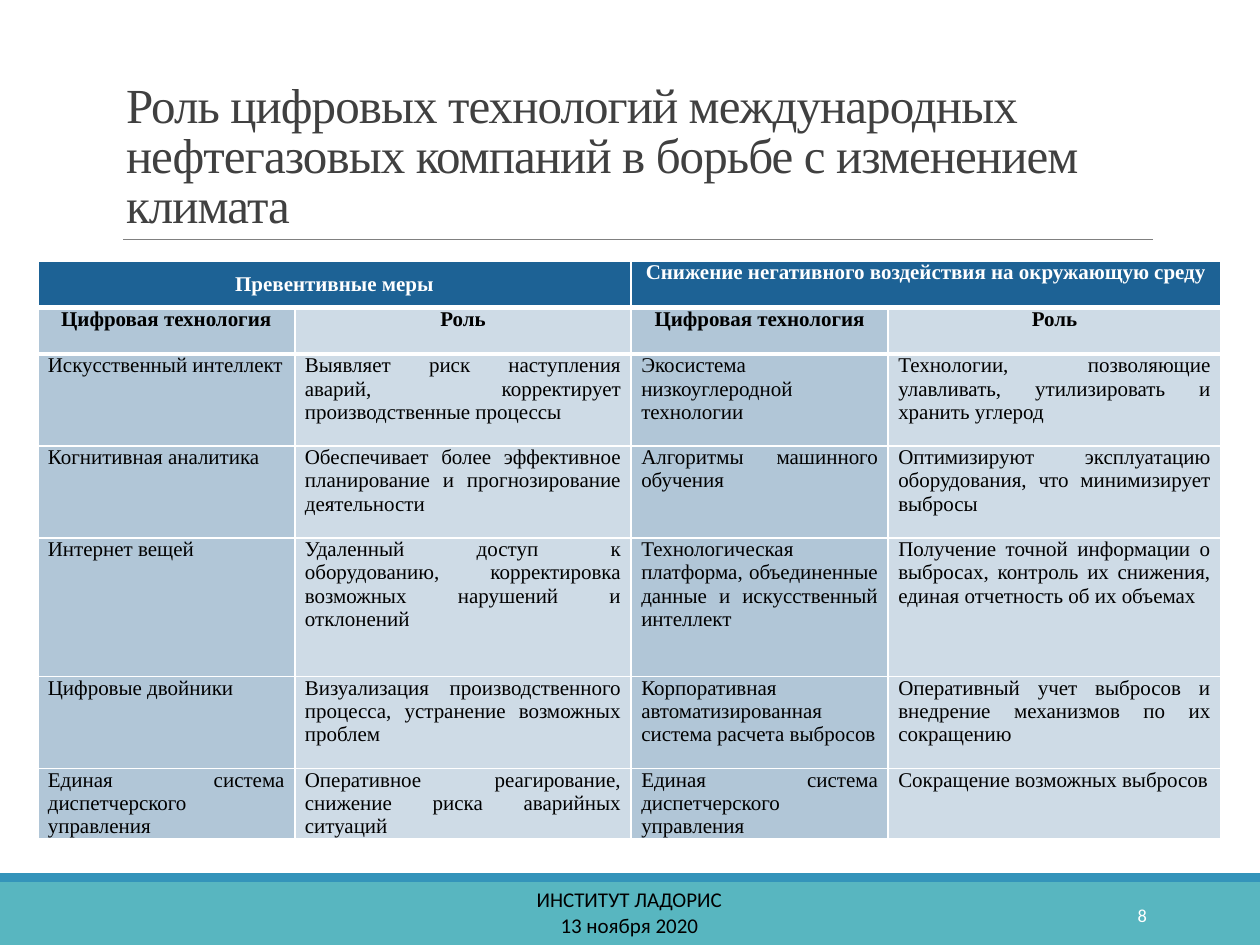
from pptx import Presentation
from pptx.dml.color import RGBColor
from pptx.enum.shapes import MSO_CONNECTOR as Connector, MSO_SHAPE as Shape
from pptx.enum.text import MSO_ANCHOR as Anchor, MSO_AUTO_SIZE as AutoSize, PP_ALIGN as Align
from pptx.oxml.ns import qn
from pptx.util import Inches, Pt
from lxml import etree

SERIF, SANS = "Times New Roman", "Calibri"
TITLE = ("Роль цифровых технологий международных нефтегазовых компаний "
         "в борьбе с изменением климата")
GROUPS = ["Превентивные меры", "Снижение негативного воздействия на окружающую среду"]
MEASURES = [
    ["Цифровая технология", "Роль"] * 2,
    ["Искусственный интеллект",
     "Выявляет риск наступления аварий, корректирует производственные процессы",
     "Экосистема низкоуглеродной технологии",
     "Технологии, позволяющие улавливать, утилизировать и хранить углерод"],
    ["Когнитивная аналитика",
     "Обеспечивает более эффективное планирование и прогнозирование деятельности",
     "Алгоритмы машинного обучения",
     "Оптимизируют эксплуатацию оборудования, что минимизирует выбросы"],
    ["Интернет вещей",
     "Удаленный доступ к оборудованию, корректировка возможных нарушений и отклонений",
     "Технологическая платформа, объединенные данные и искусственный интеллект",
     "Получение точной информации о выбросах, контроль их снижения, "
     "единая отчетность об их объемах"],
    ["Цифровые двойники",
     "Визуализация производственного процесса, устранение возможных проблем",
     "Корпоративная автоматизированная система расчета выбросов",
     "Оперативный учет выбросов и внедрение механизмов по их сокращению"],
    ["Единая система диспетчерского управления",
     "Оперативное реагирование, снижение риска аварийных ситуаций",
     "Единая система диспетчерского управления",
     "Сокращение возможных выбросов"],
]
COLUMN_WIDTHS = [2.04, 2.67, 2.04, 2.64]
ROW_HEIGHTS = [0.37, 0.37, 0.73, 0.73, 1.1, 0.73, 0.55]


def rgb(code):
    """Turn a hex string into a colour."""
    return RGBColor.from_string(code)


class SlideBuilder:
    """Hold the style and the current slide, and draw its elements."""

    HEADER, TECHNOLOGY, ROLE = "1D6295", "B1C6D7", "CEDBE6"

    def __init__(self, slide):
        """Keep the slide to draw on."""
        self.slide = slide

    def format(self, paragraph, font, size, color, align, bold=False):
        """Set the font and alignment of a paragraph."""
        paragraph.alignment = align
        paragraph.font.name = font
        paragraph.font.size = Pt(size)
        paragraph.font.bold = bold
        paragraph.font.color.rgb = rgb(color)

    def band(self, top, height, color):
        """Draw a full-width footer band."""
        band = self.slide.shapes.add_shape(
            Shape.RECTANGLE, 0, Inches(top), Inches(10), Inches(height))
        band.shadow.inherit = False
        band.fill.solid()
        band.fill.fore_color.rgb = rgb(color)
        band.line.fill.background()

    def rule(self, left, right, y, color):
        """Draw a thin horizontal line."""
        rule = self.slide.shapes.add_connector(
            Connector.STRAIGHT, Inches(left), Inches(y), Inches(right), Inches(y))
        rule.line.color.rgb = rgb(color)
        rule.line.width = Pt(0.5)
        etree.SubElement(rule._element.spPr, qn("a:effectLst"))

    def title(self, text, left, top, width, height):
        """Place and format the title placeholder."""
        title = self.slide.shapes.title
        title.left, title.top = Inches(left), Inches(top)
        title.width, title.height = Inches(width), Inches(height)
        frame = title.text_frame
        frame.text = text
        frame.word_wrap = True
        frame.auto_size = AutoSize.NONE
        frame.vertical_anchor = Anchor.BOTTOM
        heading = frame.paragraphs[0]
        self.format(heading, SERIF, 28, "404040", Align.LEFT)
        heading.line_spacing = 0.85
        heading.runs[0].font._element.set("spc", "-50")

    def label(self, text, left, top, width, height, size, color, align,
              anchor=Anchor.TOP, wrap=True):
        """Add a text box with one paragraph a line."""
        box = self.slide.shapes.add_textbox(
            Inches(left), Inches(top), Inches(width), Inches(height))
        frame = box.text_frame
        frame.text = text
        frame.word_wrap = wrap
        frame.vertical_anchor = anchor
        for paragraph in frame.paragraphs:
            self.format(paragraph, SANS, size, color, align)

    def border(self, cell, side, width, color):
        """Draw one border of a table cell."""
        line = etree.Element(qn(f"a:{side}"), w=str(Pt(width)))
        fill = etree.SubElement(line, qn("a:solidFill"))
        etree.SubElement(fill, qn("a:srgbClr"), val=color)
        cell._tc.get_or_add_tcPr().insert(0, line)

    def cell(self, cell, text, fill, color, align, bold):
        """Fill and format one table cell."""
        cell.text = text
        cell.margin_left = cell.margin_right = Inches(0.08)
        cell.margin_top = cell.margin_bottom = 0
        cell.fill.solid()
        cell.fill.fore_color.rgb = rgb(fill)
        self.format(cell.text_frame.paragraphs[0], SERIF, 12, color, align, bold)

    def table(self, left, top):
        """Add the table of measures under its two group headers."""
        table = self.slide.shapes.add_table(
            len(ROW_HEIGHTS), len(COLUMN_WIDTHS), Inches(left), Inches(top),
            Inches(sum(COLUMN_WIDTHS)), Inches(sum(ROW_HEIGHTS))).table
        table.horz_banding = False
        for column, width in zip(table.columns, COLUMN_WIDTHS):
            column.width = Inches(width)
        for row, height in zip(table.rows, ROW_HEIGHTS):
            row.height = Inches(height)
        for index, group in enumerate(GROUPS):
            header = table.cell(0, 2 * index)
            header.merge(table.cell(0, 2 * index + 1))
            self.cell(header, group, self.HEADER, "FFFFFF", Align.CENTER, True)
        table.cell(0, 0).vertical_anchor = Anchor.MIDDLE
        for row, measures in enumerate(MEASURES, start=1):
            subheader = row == 1
            align = Align.CENTER if subheader else Align.JUSTIFY
            for column, text in enumerate(measures):
                fill = self.ROLE if column % 2 else self.TECHNOLOGY
                self.cell(table.cell(row, column), text, fill, "000000", align, subheader)
        for column in range(len(COLUMN_WIDTHS)):
            self.border(table.cell(0, column), "lnB", 3, "FFFFFF")
            self.border(table.cell(1, column), "lnT", 3, "FFFFFF")


def main():
    """Build and save the slide."""
    deck = Presentation()
    deck.slide_width, deck.slide_height = Inches(10), Inches(7.5)
    builder = SlideBuilder(deck.slides.add_slide(deck.slide_layouts[5]))
    builder.band(7, 0.5, "58B6C0")
    builder.band(6.93, 0.07, "3494BA")
    builder.rule(0.98, 9.15, 1.9, "808080")
    builder.title(TITLE, 0.9, 0.31, 8.25, 1.59)
    builder.table(0.3, 2.07)
    builder.label("8", 8.12, 7.06, 1.08, 0.4, 10.5, "FFFFFF", Align.RIGHT, Anchor.MIDDLE)
    builder.label("ИНСТИТУТ ЛАДОРИС\n13 ноября 2020", 4, 6.99, 1.99, 0.5,
                  12, "000000", Align.CENTER, wrap=False)
    deck.save("out.pptx")


if __name__ == "__main__":
    main()
